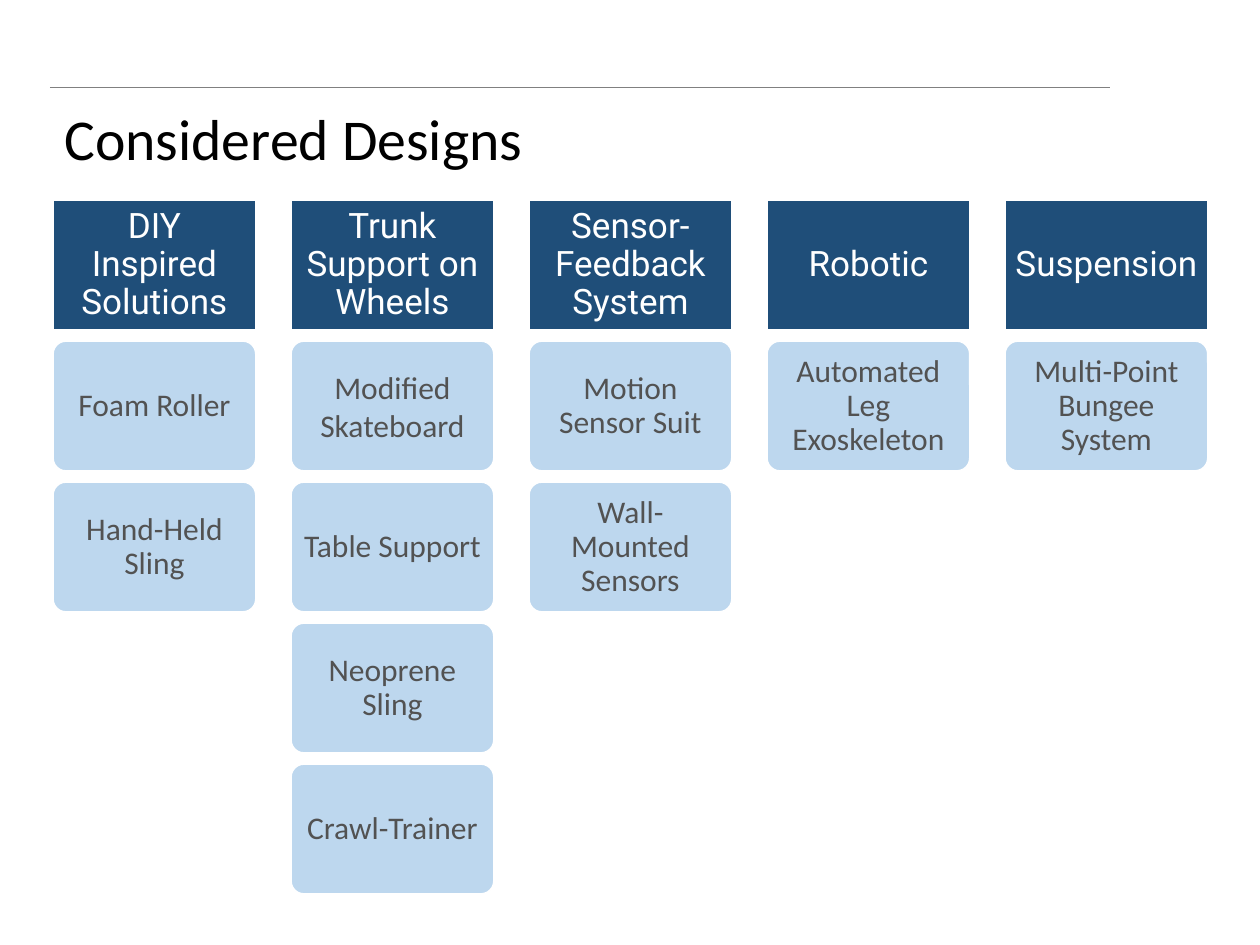
from lxml import etree
from pptx import Presentation
from pptx import util as u
from pptx.dml.color import RGBColor
from pptx.enum import shapes, text
from pptx.oxml.ns import qn

PX = 914400 // 126  # EMU per px

LEFT, TOP = 53, 200
COL_STEP, ROW_STEP = 238, 141
BOX_W, BOX_H = 203, 130

COLUMNS = [
    ("DIY Inspired Solutions", ["Foam Roller", "Hand-Held Sling"]),
    ("Trunk Support on Wheels",
     ["Modified Skateboard", "Table Support", "Neoprene Sling", "Crawl-Trainer"]),
    ("Sensor-Feedback System", ["Motion Sensor Suit", "Wall-Mounted Sensors"]),
    ("Robotic", ["Automated Leg Exoskeleton"]),
    ("Suspension", ["Multi-Point Bungee System"]),
]


def color(hex_code):
    return RGBColor.from_string(hex_code)


def set_text(sp, words, font, size, hex_code, align, spacing=0.9):
    tf = sp.text_frame
    tf.text = words
    tf.word_wrap = True
    tf.vertical_anchor = text.MSO_ANCHOR.MIDDLE
    p = tf.paragraphs[0]
    p.alignment = align
    p.line_spacing = spacing
    r = p.runs[0]
    r.font.name = font
    r.font.size = u.Pt(size)
    r.font.color.rgb = color(hex_code)
    return tf


prs = Presentation()
prs.slide_width, prs.slide_height = 1260 * PX, 945 * PX
s = prs.slides.add_slide(prs.slide_layouts[6])

# Rule above the title
rule = s.shapes.add_connector(shapes.MSO_CONNECTOR.STRAIGHT,
                              50 * PX, 87 * PX, 1110 * PX, 87 * PX)
rule.line.color.rgb = color("808080")
rule.line.width = u.Pt(0.25)
etree.SubElement(rule._element.spPr, qn("a:effectLst"))

# Title
title = s.shapes.add_textbox(52 * PX, 50 * PX, 1086 * PX, 183 * PX)
set_text(title, "Considered Designs", "Calibri", 33, "000000", text.PP_ALIGN.LEFT)

# Design categories: a header box with its options below
for col, (category, designs) in enumerate(COLUMNS):
    for row, label in enumerate([category] + designs):
        header = row == 0
        kind = shapes.MSO_SHAPE.RECTANGLE if header else shapes.MSO_SHAPE.ROUNDED_RECTANGLE
        sp = s.shapes.add_shape(kind, (LEFT + col * COL_STEP) * PX,
                                (TOP + row * ROW_STEP) * PX, BOX_W * PX, BOX_H * PX)
        sp.shadow.inherit = False
        sp.fill.solid()
        sp.fill.fore_color.rgb = color("1F4E79" if header else "BDD7EE")
        sp.line.color.rgb = color("FFFFFF")
        sp.line.width = u.Pt(1)
        if header:
            tf = set_text(sp, label, "Roboto", 20, "FFFFFF", text.PP_ALIGN.CENTER)
        else:
            sp.adjustments[0] = 0.1
            spacing = 1.0 if label == "Modified Skateboard" else 0.9
            tf = set_text(sp, label, "Calibri", 18, "525252",
                          text.PP_ALIGN.CENTER, spacing)
        tf.margin_left = tf.margin_right = 9 * PX
        tf.margin_top = tf.margin_bottom = 9 * PX

prs.save("out.pptx")
